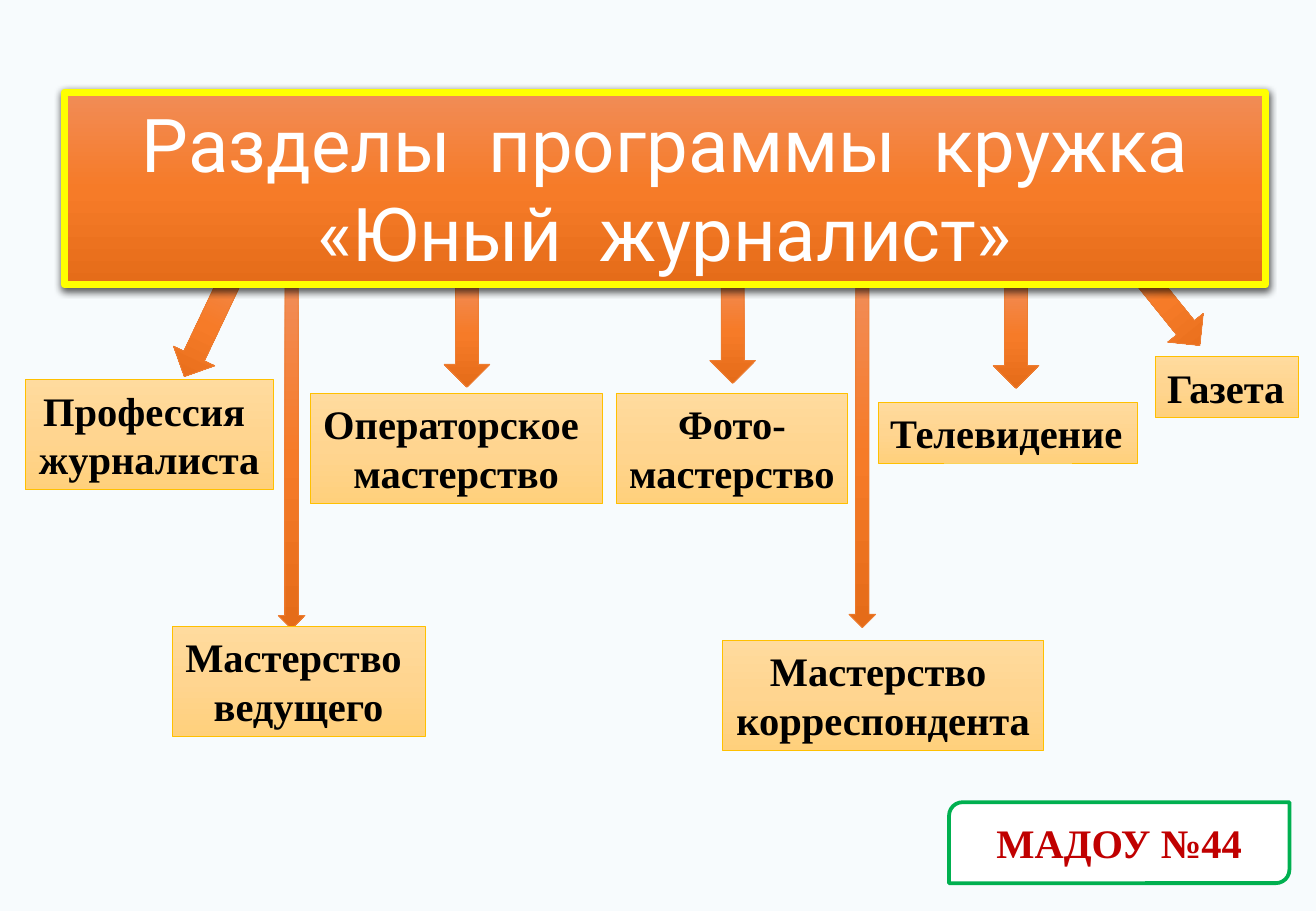
from copy import deepcopy

from lxml import etree
from pptx import Presentation
from pptx import util as u
from pptx.dml.color import RGBColor
from pptx.enum import shapes, text
from pptx.oxml.ns import qn

PX = 9525
ORANGE = ("F18C57", "F67B28", "E56C19")
SAND = ("FFDB9E", "FFD590", "FFD07C")
SERIF = "Times New Roman"
KIND = shapes.MSO_SHAPE

ARROWS = [
    (651, 30, 21, 273, 0),
    (200, 31, 21, 273, 0),
    (882, 0, 36, 90, 321.1),
    (765, 30, 36, 84, 0),
    (541, 26, 36, 84, 0),
    (331, 29, 36, 84, 0),
    (127, 19, 36, 90, 25.4),
]
TOPICS = [
    (0, 107, 196, ["Профессия ", "журналиста"]),
    (225, 118, 231, ["Операторское ", "мастерство"]),
    (467, 118, 183, ["Фото-", "мастерство"]),
    (674, 125, 205, ["Телевидение"]),
    (893, 89, 113, ["Газета"]),
    (116, 302, 200, ["Мастерство ", "ведущего"]),
    (551, 313, 254, ["Мастерство ", "корреспондента"]),
]


def rgb(value):
    """Turn a hex string into a colour."""
    return RGBColor.from_string(value)


def emu(box):
    """Turn px lengths into EMU."""
    return [u.Emu(v * PX) for v in box]


def set_gradient(sp, colours):
    """Fill a shape with a top-to-bottom three-colour gradient."""
    sp.fill.gradient()
    sp.fill.gradient_angle = 270
    stops = sp.element.spPr.find(".//" + qn("a:gsLst"))
    stops.append(deepcopy(stops[0]))
    for stop, colour, place in zip(sp.fill.gradient_stops, colours, (0, 0.5, 1)):
        stop.color.rgb = rgb(colour)
        stop.position = place


def set_line(sp, colour, width):
    """Outline a shape."""
    sp.line.color.rgb = rgb(colour)
    sp.line.width = u.Pt(width)


def add_run(p, words, size, font, colour, bold):
    """Add one formatted run to a paragraph."""
    r = p.add_run()
    r.text = words
    r.font.size = u.Pt(size)
    r.font.name = font
    r.font.color.rgb = rgb(colour)
    r.font.bold = bold
    return r


def add_shape(s, kind, box):
    """Add a preset shape without a shadow."""
    sp = s.shapes.add_shape(kind, *emu(box))
    sp.shadow.inherit = False
    return sp


def add_arrows(s, box):
    """Draw the arrows from the heading to the topics."""
    for x, y, w, h, turn in ARROWS:
        sp = add_shape(s, KIND.DOWN_ARROW, (box[0] + x, box[1] + y, w, h))
        sp.rotation = turn
        set_gradient(sp, ORANGE)
        set_line(sp, "ED7D31", 0.5)


def add_topics(s, box):
    """Draw the topic boxes of the programme."""
    for x, y, w, lines in TOPICS:
        h = 9 + 39 * len(lines)
        sp = add_shape(s, KIND.RECTANGLE, (box[0] + x, box[1] + y, w, h))
        set_gradient(sp, SAND)
        set_line(sp, "FFC000", 0.5)
        tf = sp.text_frame
        tf.word_wrap = False
        tf.auto_size = text.MSO_AUTO_SIZE.SHAPE_TO_FIT_TEXT
        tf.vertical_anchor = text.MSO_ANCHOR.TOP
        for i, line in enumerate(lines):
            p = tf.add_paragraph() if i else tf.paragraphs[0]
            p.alignment = text.PP_ALIGN.CENTER if len(lines) > 1 else text.PP_ALIGN.LEFT
            add_run(p, line, 24, SERIF, "000000", True)


def add_badge(s, box):
    """Draw the name plate of the kindergarten."""
    sp = add_shape(s, KIND.ROUND_2_DIAG_RECTANGLE, box)
    sp.fill.solid()
    sp.fill.fore_color.rgb = rgb("FFFFFF")
    set_line(sp, "00B050", 2.25)
    tf = sp.text_frame
    tf.vertical_anchor = text.MSO_ANCHOR.MIDDLE
    p = tf.paragraphs[0]
    p.alignment = text.PP_ALIGN.CENTER
    add_run(p, "МАДОУ №44", 24, SERIF, "C00000", True)


def add_title(s, box):
    """Place the heading in front, with wide gaps between its words."""
    sp = s.shapes.title
    sp.left, sp.top, sp.width, sp.height = emu(box)
    set_gradient(sp, ORANGE)
    set_line(sp, "FFFF00", 4.5)
    effects = etree.SubElement(sp.element.spPr, qn("a:effectLst"))
    shadow = etree.SubElement(effects, qn("a:outerShdw"), blurRad="57150",
                              dist="19050", dir="5400000", rotWithShape="0")
    black = etree.SubElement(shadow, qn("a:srgbClr"), val="000000")
    etree.SubElement(black, qn("a:alpha"), val="63000")
    tf = sp.text_frame
    tf.word_wrap = True
    tf.auto_size = text.MSO_AUTO_SIZE.SHAPE_TO_FIT_TEXT
    tf.vertical_anchor = text.MSO_ANCHOR.TOP
    p = tf.paragraphs[0]
    p.alignment = text.PP_ALIGN.CENTER
    for i, word in enumerate("Разделы программы кружка «Юный журналист»".split()):
        if i:
            gap = add_run(p, " ", 44, "Roboto", "FFFFFF", False)
            gap.font._element.set("spc", "1100")
        add_run(p, word, 44, "Roboto", "FFFFFF", False)
    s.shapes.element.append(sp.element)


def main():
    """Build the slide and save it."""
    prs = Presentation()
    prs.slide_width, prs.slide_height = emu((1040, 720))
    s = prs.slides.add_slide(prs.slide_layouts[5])
    s.background.fill.solid()
    s.background.fill.fore_color.rgb = rgb("F7FBFD")
    diagram = (20, 193, 1006, 400)
    add_arrows(s, diagram)
    add_badge(s, (750, 634, 269, 64))
    add_topics(s, diagram)
    add_title(s, (51, 73, 949, 152))
    prs.save("out.pptx")


if __name__ == "__main__":
    main()
